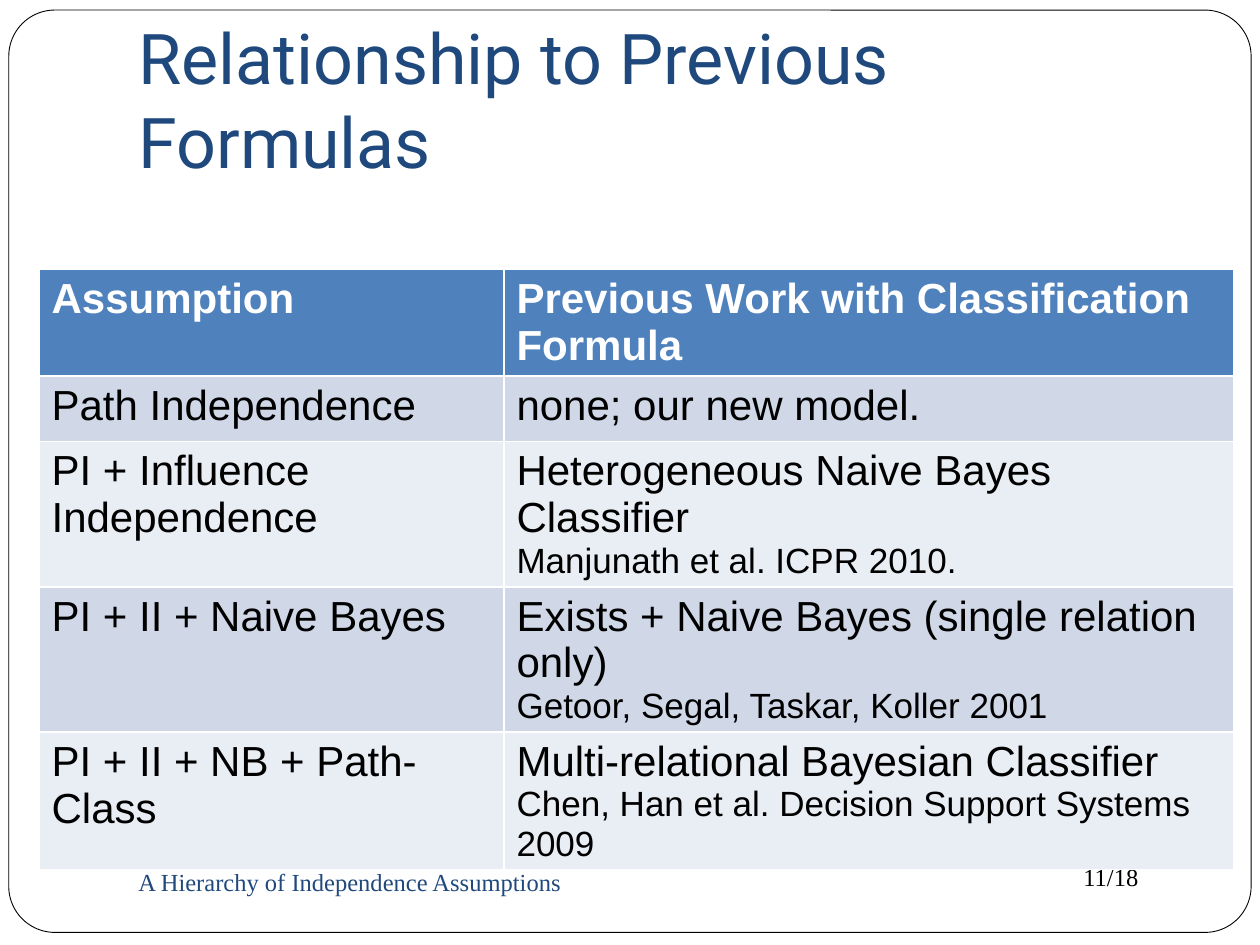
from dataclasses import dataclass
from typing import Any, NamedTuple

from pptx import Presentation
from pptx.dml.color import RGBColor
from pptx.enum.shapes import MSO_SHAPE
from pptx.enum.text import MSO_ANCHOR, MSO_AUTO_SIZE, PP_ALIGN
from pptx.util import Inches, Pt

WIDE, HIGH = Inches(10), Inches(7.5)
COLS, ROWS = 100, 75  # grid of the slide, one unit is a tenth of an inch


@dataclass(frozen=True)
class Theme:
    white: str = "FFFFFF"
    black: str = "000000"
    navy: str = "1F497D"
    head: str = "4F81BD"
    bands: tuple[str, str] = ("D0D8E8", "E9EDF4")
    title: str = "Roboto"
    body: str = "Arial"
    foot: str = "Times New Roman"
    large: int = 40
    main: int = 24
    note: int = 20
    small: int = 14


class Box(NamedTuple):
    """Left, top, width and height in grid units."""
    left: float
    top: float
    width: float
    height: float

    def place(self) -> tuple[int, int, int, int]:
        return (across(self.left), down(self.top),
                across(self.width), down(self.height))


class Row(NamedTuple):
    rule: str
    work: str
    source: str = ""
    split: bool = False  # the source starts its own paragraph
    height: float = 9


class Label(NamedTuple):
    text: str
    box: Box
    color: str
    anchor: MSO_ANCHOR


THEME = Theme()
CARD = Box(0.7, 0.8, 98.6, 73.2)
TITLE = Box(10, 3, 85, 12.5)
TABLE = Box(3.1, 21.4, 94.8, 37.4)
SPLIT = (36.9, 57.9)
LINES = [
    Row("Assumption", "Previous Work with Classification Formula", height=5.2),
    Row("Path Independence", "none; our new model.", height=5.2),
    Row("PI + Influence Independence", "Heterogeneous Naive Bayes Classifier",
        "Manjunath et al. ICPR 2010."),
    Row("PI + II + Naive Bayes", "Exists + Naive Bayes (single relation only)",
        "Getoor, Segal, Taskar, Koller 2001"),
    Row("PI + II + NB + Path-Class", "Multi-relational Bayesian Classifier",
        "Chen, Han et al. Decision Support Systems 2009", split=True),
]
PAGE = Label("11/18", Box(85, 67.9, 10, 3.4), THEME.black, MSO_ANCHOR.TOP)
FOOT = Label("A Hierarchy of Independence Assumptions",
             Box(10, 67.5, 43.3, 5), THEME.navy, MSO_ANCHOR.MIDDLE)


def across(units: float) -> int:
    return round(WIDE * units / COLS)


def down(units: float) -> int:
    return round(HIGH * units / ROWS)


def apply(target: Any, values: dict[str, Any]) -> None:
    for name, value in values.items():
        setattr(target, name, value)


def paint(fill: Any, color: str) -> None:
    fill.solid()
    fill.fore_color.rgb = RGBColor.from_string(color)


def write(para: Any, text: str, face: str, size: int, color: str,
          bold: bool = False) -> None:
    run = para.add_run()
    run.text = text
    apply(run.font, {"name": face, "size": Pt(size), "bold": bold})
    run.font.color.rgb = RGBColor.from_string(color)


def draw_card(slide: Any) -> None:
    card = slide.shapes.add_shape(MSO_SHAPE.ROUNDED_RECTANGLE, *CARD.place())
    card.adjustments[0] = 0.05
    card.shadow.inherit = False
    paint(card.fill, THEME.white)
    paint(card.line.fill, THEME.black)
    card.line.width = Pt(0.5)


def draw_title(slide: Any, text: str) -> None:
    title = slide.shapes.title
    left, top, width, height = TITLE.place()
    apply(title, {"left": left, "top": top, "width": width, "height": height})
    apply(title.text_frame, {
        "word_wrap": True, "auto_size": MSO_AUTO_SIZE.NONE,
        "vertical_anchor": MSO_ANCHOR.BOTTOM, "margin_bottom": Inches(0.1)})
    para = title.text_frame.paragraphs[0]
    para.alignment = PP_ALIGN.LEFT
    write(para, text, THEME.title, THEME.large, THEME.navy)
    slide.shapes._spTree.append(title._element)  # bring in front of the card


def draw_label(slide: Any, label: Label) -> None:
    frame = slide.shapes.add_textbox(*label.box.place()).text_frame
    apply(frame, {"word_wrap": True, "vertical_anchor": label.anchor})
    write(frame.paragraphs[0], label.text, THEME.foot, THEME.small, label.color)


def draw_table(slide: Any) -> None:
    table = slide.shapes.add_table(len(LINES), len(SPLIT), *TABLE.place()).table
    for col, width in zip(table.columns, SPLIT):
        col.width = across(width)
    for index, line in enumerate(LINES):
        table.rows[index].height = down(line.height)
        top = index == 0
        back = THEME.head if top else THEME.bands[(index - 1) % 2]
        ink = THEME.white if top else THEME.black
        for cell, text in zip(table.rows[index].cells, (line.rule, line.work)):
            paint(cell.fill, back)
            write(cell.text_frame.paragraphs[0], text, THEME.body, THEME.main,
                  ink, top)
        if line.source:
            frame = table.cell(index, 1).text_frame
            para = frame.paragraphs[0]
            if line.split:
                para = frame.add_paragraph()
            else:
                para.add_line_break()
            write(para, line.source, THEME.body, THEME.note, ink)


def main() -> None:
    deck = Presentation()
    apply(deck, {"slide_width": WIDE, "slide_height": HIGH})
    slide = deck.slides.add_slide(deck.slide_layouts.get_by_name("Title Only"))
    paint(slide.background.fill, THEME.white)
    draw_card(slide)
    draw_label(slide, PAGE)
    draw_title(slide, "Relationship to Previous Formulas")
    draw_table(slide)
    draw_label(slide, FOOT)
    deck.save("out.pptx")


if __name__ == "__main__":
    main()
